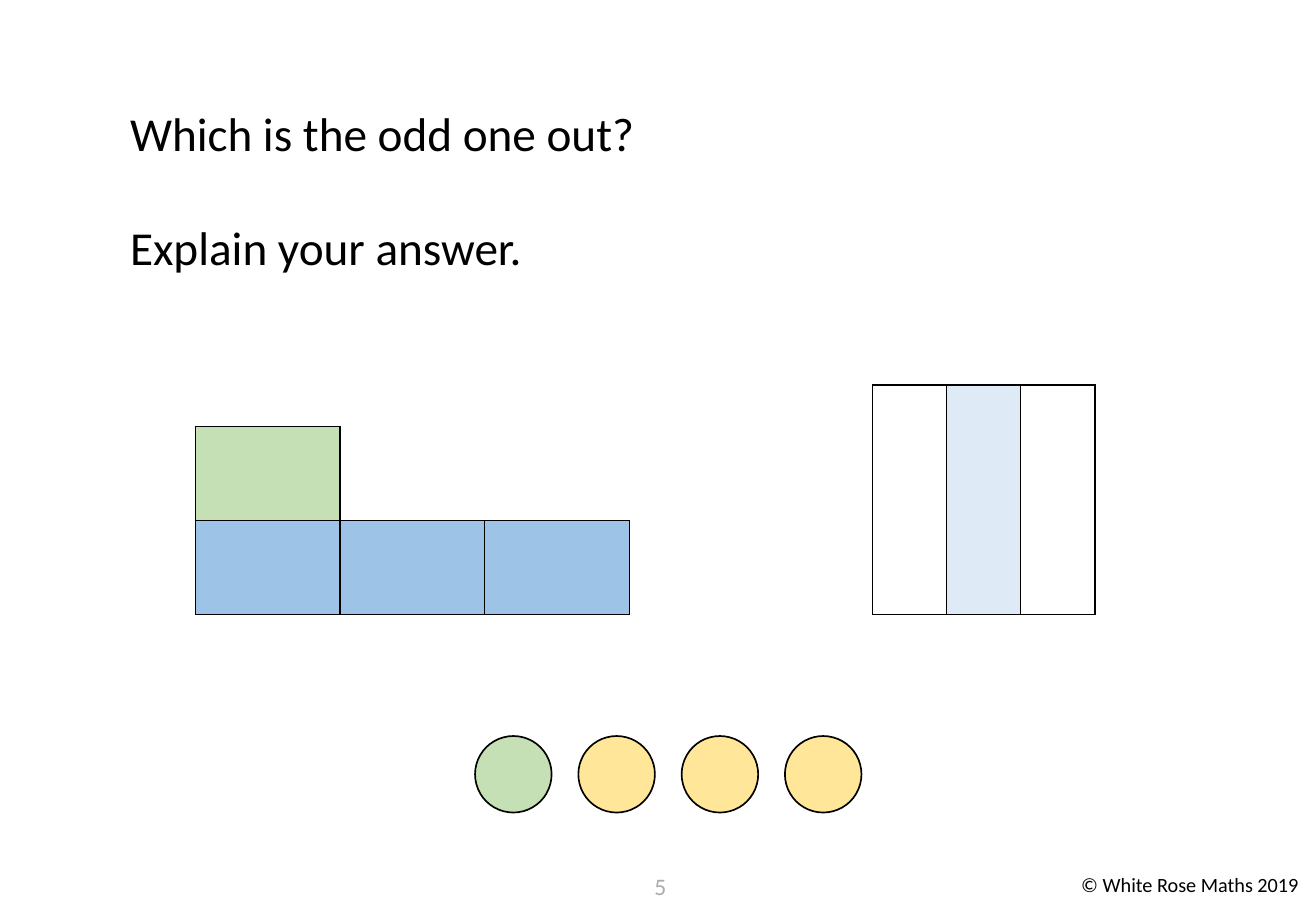
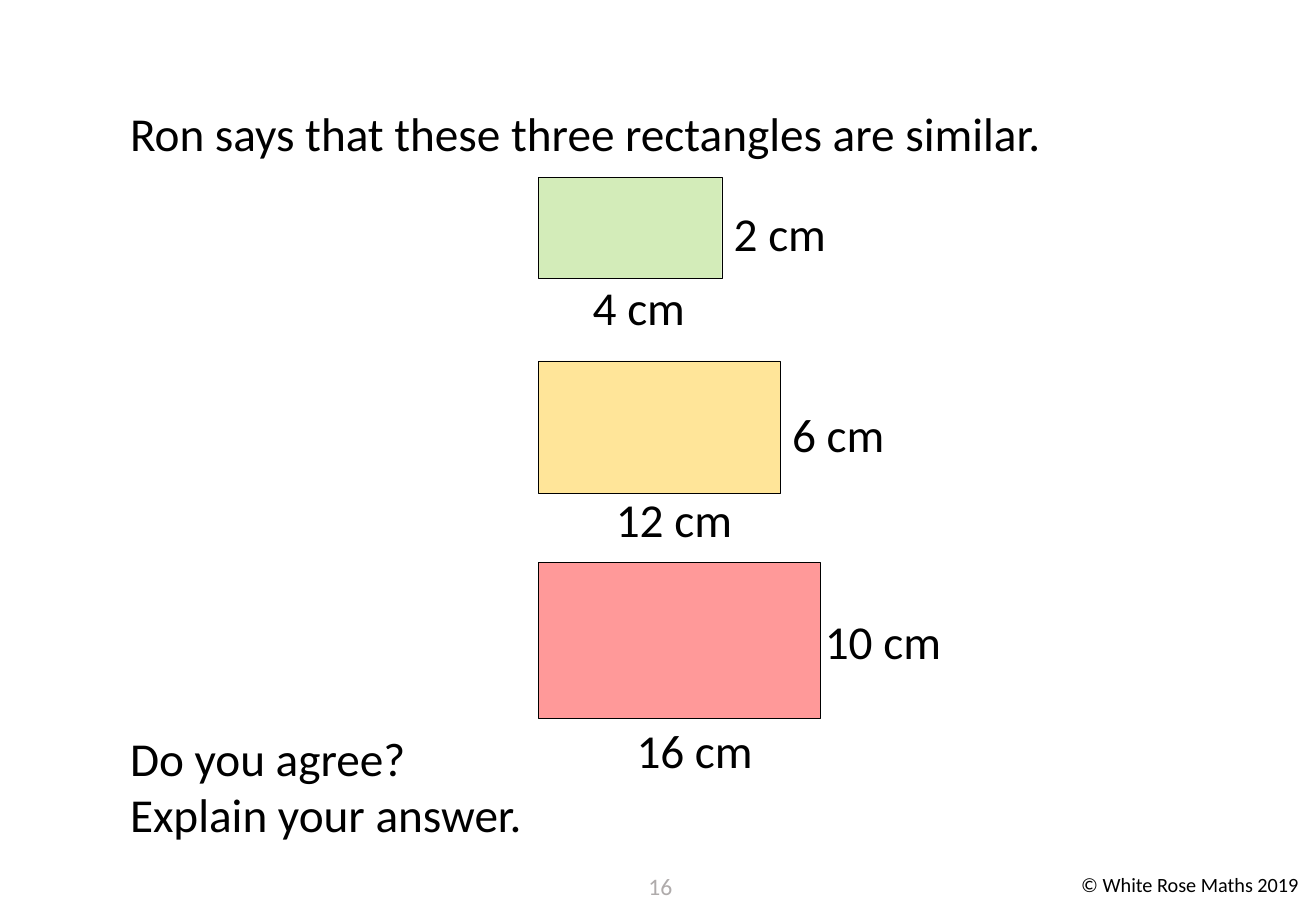
from lxml.etree import SubElement
from pptx import Presentation
from pptx.dml.color import RGBColor
from pptx.enum.shapes import MSO_SHAPE
from pptx.enum.text import MSO_ANCHOR, MSO_AUTO_SIZE, PP_ALIGN
from pptx.oxml.ns import qn
from pptx.util import Inches, Pt

FONT = "Calibri"
BLACK, GREY, WHITE = "000000", "AFABAB", "FFFFFF"
GREEN, BLUE, PALE_BLUE, YELLOW = "C5E0B4", "9DC3E6", "DEEBF7", "FFE699"
LEFT = 0.97
TITLE_TOP = 0.81
LINE_HEIGHT = 0.57
ALL_SIDES = "LRTB"


def color(value):
    return RGBColor.from_string(value)


def write_text(shape, text, size=28, ink=BLACK, align=PP_ALIGN.LEFT):
    frame = shape.text_frame
    frame.word_wrap = True
    frame.auto_size = MSO_AUTO_SIZE.NONE
    frame.vertical_anchor = MSO_ANCHOR.TOP
    for index, line in enumerate(text.split("\n")):
        para = frame.paragraphs[0] if index == 0 else frame.add_paragraph()
        para.alignment = align
        para.space_before = Pt(0)
        if shape.is_placeholder:
            properties = para._p.get_or_add_pPr()
            properties.set("marL", "0")
            properties.set("indent", "0")
            SubElement(properties, qn("a:buNone"))
        span = para.add_run()
        span.text = line
        span.font.name = FONT
        span.font.size = Pt(size)
        span.font.color.rgb = color(ink)


def place(shape, left, top, width, height):
    shape.left, shape.top = Inches(left), Inches(top)
    shape.width, shape.height = Inches(width), Inches(height)


def add_label(page, text, left, top, width=1.5, height=LINE_HEIGHT, **style):
    box = page.shapes.add_textbox(
        Inches(left), Inches(top), Inches(width), Inches(height))
    write_text(box, text, **style)
    return box


def add_figure(page, kind, left, top, width, height, fill, line_width, opacity=100):
    shape = page.shapes.add_shape(
        kind, Inches(left), Inches(top), Inches(width), Inches(height))
    shape.shadow.inherit = False
    shape.fill.solid()
    shape.fill.fore_color.rgb = color(fill)
    if opacity < 100:
        fill_color = shape.element.spPr.find(qn("a:solidFill")).find(qn("a:srgbClr"))
        SubElement(fill_color, qn("a:alpha")).set("val", str(opacity * 1000))
    shape.line.color.rgb = color(BLACK)
    shape.line.width = Pt(line_width)
    return shape


def format_cell(cell, fill, sides):
    properties = cell._tc.get_or_add_tcPr()
    for side in ALL_SIDES:
        border = SubElement(properties, qn(f"a:ln{side}"))
        border.set("w", str(Pt(1)))
        if side in sides:
            solid = SubElement(border, qn("a:solidFill"))
            SubElement(solid, qn("a:srgbClr")).set("val", BLACK)
        else:
            SubElement(border, qn("a:noFill"))
    if fill:
        cell.fill.solid()
        cell.fill.fore_color.rgb = color(fill)
    else:
        cell.fill.background()


def add_bars(page, left, top, width, height, rows):
    columns = len(rows[0])
    table = page.shapes.add_table(
        len(rows), columns, Inches(left), Inches(top),
        Inches(width), Inches(height)).table
    table.first_row = False
    table.horz_banding = False
    for column in table.columns:
        column.width = Inches(width / columns)
    for row_index, row in enumerate(rows):
        table.rows[row_index].height = Inches(height / len(rows))
        for column_index, (fill, sides) in enumerate(row):
            format_cell(table.cell(row_index, column_index), fill, sides)


def add_counters(page, left, top, diameter, pitch, fills):
    for index, fill in enumerate(fills):
        add_figure(page, MSO_SHAPE.OVAL, left + index * pitch, top,
                   diameter, diameter, fill, 1)


def add_measured_rectangle(page, left, top, width, height, fill,
                           side_text, side_shift, base_text, base_shift):
    add_figure(page, MSO_SHAPE.RECTANGLE, left, top, width, height, fill, 0.25, 40)
    add_label(page, side_text, left + width + side_shift[0], top + side_shift[1])
    add_label(page, base_text, left + base_shift[0], top + height + base_shift[1])


def add_question_page(deck, number, title, prompt, prompt_top, prompt_height):
    page = deck.slides.add_slide(deck.slide_layouts[1])
    place(page.shapes.title, LEFT, TITLE_TOP, 8.81, LINE_HEIGHT)
    write_text(page.shapes.title, title)
    body = page.placeholders[1]
    place(body, LEFT, prompt_top, 3.8, prompt_height)
    write_text(body, prompt)
    add_label(page, number, 5.18, 7.13, 0.51, 0.37,
              size=14, ink=GREY, align=PP_ALIGN.CENTER)
    return page


def add_shared_footer(deck, page):
    footer = add_label(page, "© White Rose Maths 2019", 8.8, 7.13, 2.03, 0.3, size=12)
    deck.slide_layouts[1].shapes.element.append(footer.element)


def build_odd_one_out(deck):
    page = add_question_page(deck, "5", "Which is the odd one out?",
                             "Explain your answer.", 1.75, LINE_HEIGHT)
    add_bars(page, 7.18, 3.17, 1.83, 1.89,
             [[(fill, ALL_SIDES) for fill in (WHITE, PALE_BLUE, WHITE)]])
    add_bars(page, 1.61, 3.51, 3.57, 1.55, [
        [(GREEN, ALL_SIDES), (None, "LB"), (None, "B")],
        [(BLUE, ALL_SIDES)] * 3,
    ])
    add_counters(page, 3.91, 6.06, 0.63, 0.85, [GREEN] + [YELLOW] * 3)
    return page


def build_similar_rectangles(deck):
    page = add_question_page(
        deck, "16", "Ron says that these three rectangles are similar.",
        "Do you agree?\nExplain your answer.", 5.95, 1.04)
    rectangles = [
        (1.46, 1.51, 0.83, "92D050", "2 cm", (0, 0.17), "4 cm", (0.35, -0.05)),
        (2.97, 1.99, 1.09, "FFC000", "6 cm", (0, 0.32), "12 cm", (0.54, -0.07)),
        (4.63, 2.32, 1.28, "FF0000", "10 cm", (-0.06, 0.36), "16 cm", (0.71, -0.02)),
    ]
    for rectangle in rectangles:
        add_measured_rectangle(page, 4.43, *rectangle)


def main():
    deck = Presentation()
    deck.slide_width, deck.slide_height = Inches(10.83), Inches(7.5)
    first_page = build_odd_one_out(deck)
    add_shared_footer(deck, first_page)
    build_similar_rectangles(deck)
    deck.save("out.pptx")


if __name__ == "__main__":
    main()
